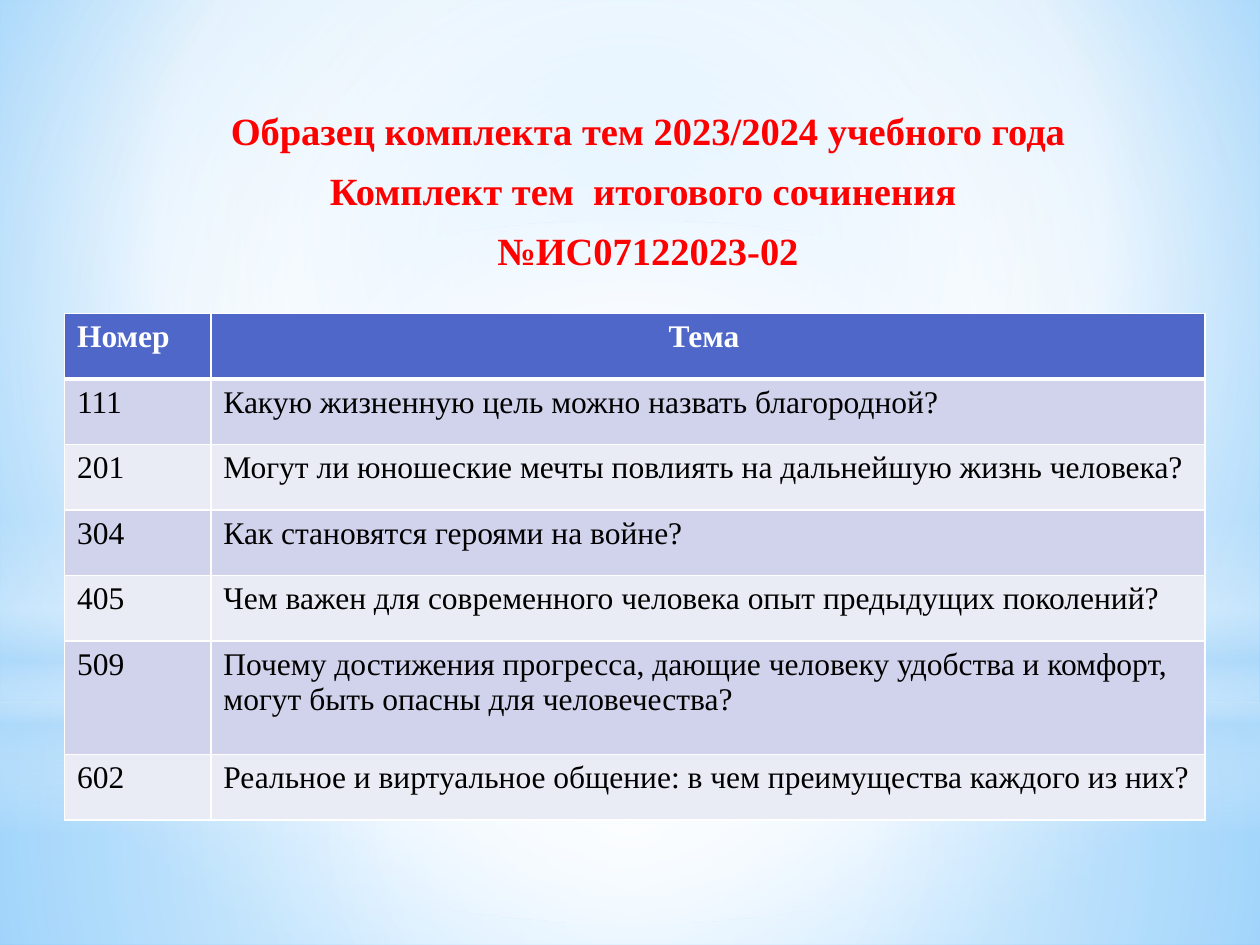
from dataclasses import dataclass

from lxml import etree
from pptx import Presentation
from pptx.dml.color import RGBColor
from pptx.enum.shapes import MSO_SHAPE
from pptx.enum.text import MSO_ANCHOR, MSO_AUTO_SIZE, PP_ALIGN
from pptx.oxml.ns import qn
from pptx.util import Cm, Pt

RECT, OVAL = MSO_SHAPE.RECTANGLE, MSO_SHAPE.OVAL
LEFT, CENTER = PP_ALIGN.LEFT, PP_ALIGN.CENTER
TOP, FIXED = MSO_ANCHOR.TOP, MSO_AUTO_SIZE.NONE


@dataclass(frozen=True)
class Theme:
    font: str = "Times New Roman"
    title: str = "FF0000"
    head: str = "4E67C8"
    odd: str = "D0D3EB"
    even: str = "E9EBF5"
    white: str = "FFFFFF"
    black: str = "000000"
    sky: str = "B4DCFA"
    pale: str = "9ED5FF"
    deep: str = "5BB9FF"
    big: int = 22
    small: int = 18


@dataclass(frozen=True)
class Box:
    x: float
    y: float
    w: float
    h: float

    def inner(self, x, y, w, h):
        return Box(self.x + x, self.y + y, w, h)

    def span(self):
        return [Cm(v) for v in (self.x, self.y, self.w, self.h)]


THEME = Theme()
MID = (50, 50, 50, 50)
HEADING = [
    "Образец комплекта тем 2023/2024 учебного года",
    "Комплект тем  итогового сочинения ",
    "№ИС07122023-02",
]
TOPICS = [
    ("Номер", "Тема "),
    ("111", "Какую жизненную цель можно назвать благородной?"),
    ("201", "Могут ли юношеские мечты повлиять на дальнейшую жизнь человека?"),
    ("304", "Как становятся героями на войне?"),
    ("405", "Чем важен для современного человека опыт предыдущих поколений?"),
    ("509", "Почему достижения прогресса, дающие человеку удобства и комфорт, "
            "могут быть опасны для человечества?"),
    ("602", "Реальное и виртуальное общение: в чем преимущества каждого из них?"),
]


def write(para, text, size=THEME.small, color=THEME.black, bold=False, align=LEFT):
    run = para.add_run()
    run.text = text
    para.alignment = align
    font = run.font
    font.name, font.size, font.bold = THEME.font, Pt(size), bold
    font.color.rgb = RGBColor.from_string(color)


def node(parent, tag, **attrs):
    return etree.SubElement(parent, qn(tag), {k: str(v) for k, v in attrs.items()})


def blend(fill, owner, stops, focus=None):
    fill.gradient()
    grad = next(owner.iter(qn("a:gradFill")))
    for child in list(grad):
        grad.remove(child)
    series = node(grad, "a:gsLst")
    for pos, color, alpha in stops:
        stop = node(series, "a:gs", pos=pos * 1000)
        tint = node(stop, "a:srgbClr", val=color)
        if alpha < 100:
            node(tint, "a:alpha", val=alpha * 1000)
    if focus:
        route = node(grad, "a:path", **{"path": "circle"})
        node(route, "a:fillToRect", **{k: v * 1000 for k, v in zip("ltrb", focus)})
    else:
        node(grad, "a:lin", ang=5400000, scaled=0)


def glow(slide, kind, box, stops, focus=None):
    shape = slide.shapes.add_shape(kind, *box.span())
    shape.shadow.inherit = False
    shape.line.fill.background()
    blend(shape.fill, shape.element.spPr, stops, focus)


def scene(slide, box):
    white, sky = THEME.white, THEME.sky
    blend(slide.background.fill, slide.element,
          [(0, THEME.pale, 100), (60, white, 100), (100, THEME.deep, 100)],
          (20, 10, 20, 60))
    split = 14.17
    glow(slide, RECT, box.inner(0, split, box.w, box.h - split),
         [(0, white, 91), (37, white, 76), (100, sky, 79)], MID)
    glow(slide, RECT, box.inner(0, 0, box.w, split),
         [(0, white, 89), (48, white, 62), (100, sky, 79)], MID)
    glow(slide, RECT, box.inner(0, 10.46, box.w, 6.35),
         [(0, white, 0), (29, white, 30), (45, sky, 40),
          (55, white, 26), (65, sky, 60), (100, white, 0)])
    glow(slide, OVAL, box.inner(0, 4.45, box.w, split),
         [(0, white, 100), (56, white, 0)], MID)


def heading(slide, box):
    body = slide.placeholders[1]
    slide.shapes.element.append(body.element)
    body.left, body.top, body.width, body.height = box.span()
    frame = body.text_frame
    frame.auto_size, frame.vertical_anchor, frame.word_wrap = FIXED, TOP, True
    for i, text in enumerate(HEADING):
        para = frame.add_paragraph() if i else frame.paragraphs[0]
        write(para, text, size=THEME.big, color=THEME.title, bold=True, align=CENTER)
        para.space_before, para.space_after = Pt(5), Pt(3)
        props = para._p.get_or_add_pPr()
        props.set("marL", str(Cm(0.13)))
        props.set("indent", "0")
        node(props, "a:buNone")


def border(cell, top, bottom):
    props = cell._tc.get_or_add_tcPr()
    for i, (side, width) in enumerate(zip("LRTB", (1, 1, top, bottom))):
        line = node(props, f"a:ln{side}", w=Pt(width))
        node(node(line, "a:solidFill"), "a:srgbClr", val=THEME.white)
        props.insert(i, line)


def topics(slide, box):
    table = slide.shapes.add_table(len(TOPICS), 2, *box.span()).table
    first = 2.95
    for col, width in zip(table.columns, (first, box.w - first)):
        col.width = Cm(width)
    for r, texts in enumerate(TOPICS):
        table.rows[r].height = Cm(2.29 if texts[0] == "509" else 1.32)
        head = r == 0
        shade = THEME.head if head else THEME.odd if r % 2 else THEME.even
        for c, text in enumerate(texts):
            cell = table.cell(r, c)
            cell.fill.solid()
            cell.fill.fore_color.rgb = RGBColor.from_string(shade)
            border(cell, top=3 if r == 1 else 1, bottom=3 if head else 1)
            write(cell.text_frame.paragraphs[0], text, bold=head,
                  color=THEME.white if head else THEME.black,
                  align=CENTER if head and c else LEFT)


def main():
    deck = Presentation()
    page = Box(0, 0, 25.4, 19.05)
    deck.slide_width, deck.slide_height = Cm(page.w), Cm(page.h)
    slide = deck.slides.add_slide(deck.slide_layouts[1])
    title = slide.shapes.title.element
    title.getparent().remove(title)
    scene(slide, page)
    heading(slide, page.inner(1.3, 2.03, 23.39, 15.7))
    topics(slide, page.inner(1.3, 6.32, 22.99, 10.21))
    deck.save("out.pptx")


if __name__ == "__main__":
    main()
